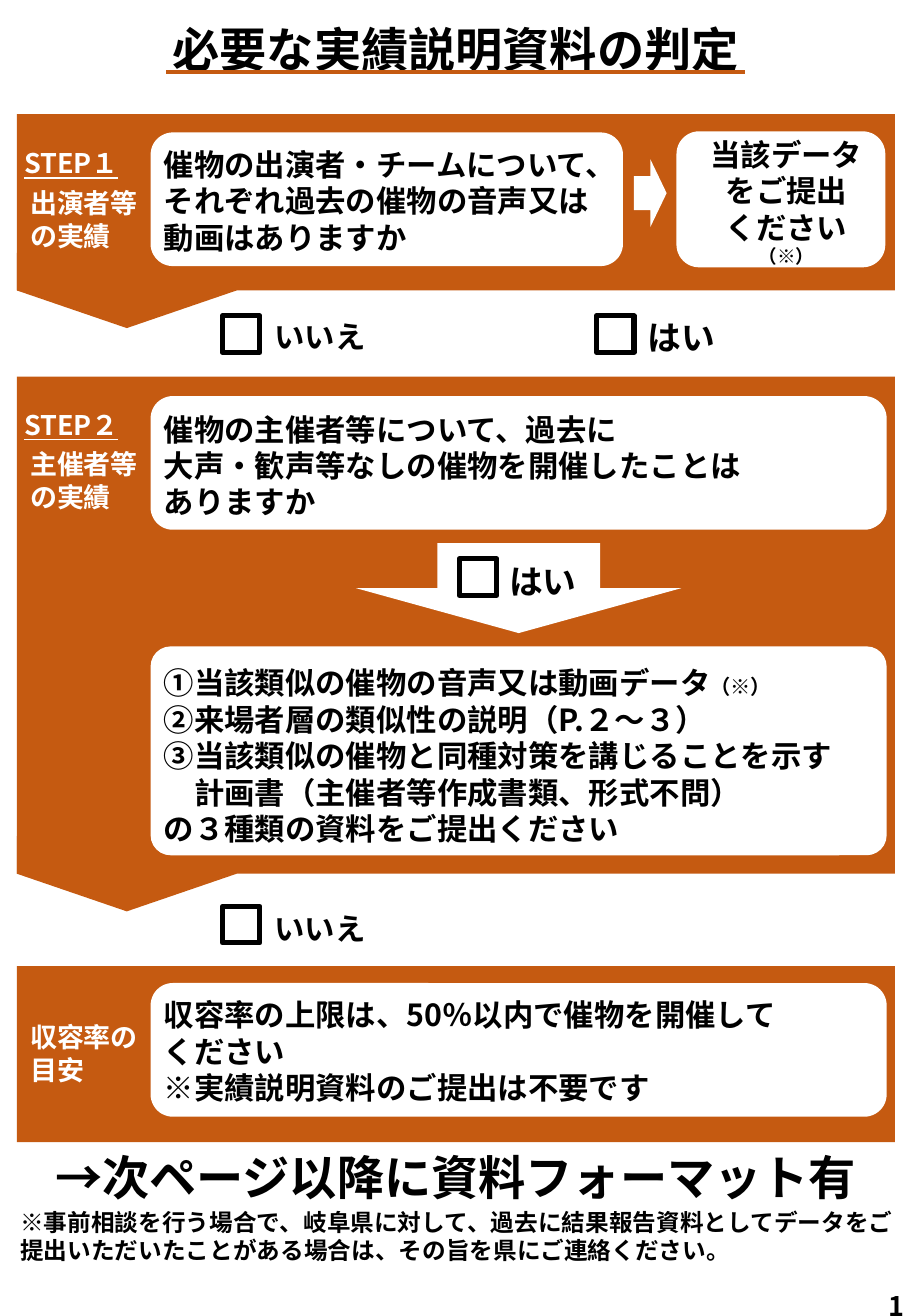
from dataclasses import dataclass
from typing import Optional

from lxml.etree import SubElement
from pptx import Presentation
from pptx.dml.color import RGBColor
from pptx.enum.shapes import MSO_CONNECTOR, MSO_SHAPE
from pptx.enum.text import MSO_AUTO_SIZE, PP_ALIGN
from pptx.oxml.ns import qn
from pptx.util import Pt

ORANGE = RGBColor(0xC5, 0x5A, 0x11)
WHITE = RGBColor(0xFF, 0xFF, 0xFF)
BLACK = RGBColor(0x00, 0x00, 0x00)
FONT = "Noto Sans CJK JP"

BAND_LEFT, BAND_WIDTH = 10, 520.5
POINTER_WIDTH, POINTER_DEPTH = 130.3, 44.6
PANEL_LEFT = 89.3


@dataclass
class Box:
    left: float
    top: float
    width: float
    height: float


@dataclass
class Line:
    text: str
    note: str = ""
    note_size: float = 11
    size: Optional[float] = None
    underline: bool = False
    space_before: float = 0


@dataclass
class Text:
    box: Box
    lines: list[Line]
    size: float = 18
    color: RGBColor = BLACK
    centered: bool = False


@dataclass
class Panel:
    box: Box
    corner: float = 0.1667


@dataclass
class Arrow:
    box: Box
    rotation: float = 0


@dataclass
class Section:
    top: float
    height: float
    pointer: bool
    panels: list[Panel]
    arrows: list[Arrow]
    texts: list[Text]
    checkboxes: list[tuple[float, float]]


def add_shape(shapes, kind: MSO_SHAPE, box: Box, fill: Optional[RGBColor]):
    sp = shapes.add_shape(kind, Pt(box.left), Pt(box.top), Pt(box.width), Pt(box.height))
    sp.shadow.inherit = False
    if fill is None:
        sp.fill.background()
    else:
        sp.fill.solid()
        sp.fill.fore_color.rgb = fill
    sp.line.fill.background()
    return sp


def add_text(shapes, text: Text) -> None:
    box = text.box
    sp = shapes.add_textbox(Pt(box.left), Pt(box.top), Pt(box.width), Pt(box.height))
    tf = sp.text_frame
    tf.word_wrap = True
    tf.auto_size = MSO_AUTO_SIZE.SHAPE_TO_FIT_TEXT
    for i, line in enumerate(text.lines):
        p = tf.add_paragraph() if i else tf.paragraphs[0]
        p.alignment = PP_ALIGN.CENTER if text.centered else PP_ALIGN.LEFT
        if line.space_before:
            p.space_before = Pt(line.space_before)
        p.font.size = Pt(line.size or text.size)
        p.font.bold = True
        p.font.underline = line.underline
        p.font.color.rgb = text.color
        p.font.name = FONT
        # East Asian typeface
        SubElement(p._p.pPr.find(qn("a:defRPr")), qn("a:ea")).set("typeface", FONT)
        p.add_run().text = line.text
        if line.note:
            r = p.add_run()
            r.text = line.note
            r.font.size = Pt(line.note_size)


def add_section(slide_shapes, section: Section) -> None:
    shapes = slide_shapes.add_group_shape().shapes
    # Band, with a pointer centred on its bottom edge
    if section.pointer:
        bottom = section.top + section.height
        center = BAND_LEFT + POINTER_WIDTH / 2
        box = Box(center - POINTER_DEPTH / 2, bottom - POINTER_WIDTH / 2,
                  POINTER_DEPTH, POINTER_WIDTH)
        add_shape(shapes, MSO_SHAPE.PENTAGON, box, ORANGE).rotation = 90
    band = Box(BAND_LEFT, section.top, BAND_WIDTH, section.height)
    add_shape(shapes, MSO_SHAPE.RECTANGLE, band, ORANGE)
    # White panels and arrows
    for panel in section.panels:
        sp = add_shape(shapes, MSO_SHAPE.ROUNDED_RECTANGLE, panel.box, WHITE)
        sp.adjustments[0] = panel.corner
    for arrow in section.arrows:
        sp = add_shape(shapes, MSO_SHAPE.RIGHT_ARROW, arrow.box, WHITE)
        sp.rotation = arrow.rotation
    for text in section.texts:
        add_text(shapes, text)
    # Checkboxes
    for left, top in section.checkboxes:
        sp = add_shape(shapes, MSO_SHAPE.RECTANGLE, Box(left, top, 22.3, 21.6), None)
        sp.line.color.rgb = BLACK
        sp.line.width = Pt(3)


def label(top: float, lines: list[str], step: str = "") -> Text:
    rows = [Line(line) for line in lines]
    if step:
        rows[0].space_before = 4.4
        rows.insert(0, Line(step, underline=True))
    return Text(Box(7.2, top, 85.7, 69 if step else 46), rows, 16, WHITE)


def body(top: float, width: float, height: float, *lines: Line) -> Text:
    return Text(Box(90, top, width, height), list(lines))


def yes(left: float, top: float) -> Text:
    return Text(Box(left, top, 67.7, 31.7), [Line("はい")], 20, centered=True)


def no(top: float) -> Text:
    return Text(Box(144, top, 91.4, 28.8), [Line("いいえ")], centered=True)


SECTIONS = [
    Section(67.7, 104.4, True,
            [Panel(Box(PANEL_LEFT, 78.5, 280, 79.2)), Panel(Box(401, 77.8, 123.8, 80.6))],
            [Arrow(Box(375.8, 94.3, 19.4, 40.3))],
            [label(83.5, [" 出演者等", " の実績"], "STEP１"),
             body(82.8, 280.8, 72.7, Line("催物の出演者・チームについて、"),
                  Line("それぞれ過去の催物の音声又は動画はありますか")),
             Text(Box(395.3, 77, 141.8, 85.7),
                  [Line("当該データ"), Line("をご提出"), Line("ください"),
                   Line("（※）", size=11)], centered=True),
             yes(370, 184.3), no(185)],
            [(353.5, 187.2), (131.8, 187.2)]),
    Section(223.2, 294.5, True,
            [Panel(Box(PANEL_LEFT, 234.7, 436.3, 79.2)),
             Panel(Box(PANEL_LEFT, 383, 436.3, 123.8), 0.096)],
            [Arrow(Box(280.8, 252, 53.3, 193), 90)],
            [label(238.3, [" 主催者等", " の実績"], "STEP２"),
             body(239.8, 435.6, 72.7, Line("催物の主催者等について、過去に"),
                  Line("大声・歓声等なしの催物を開催したことは"), Line("ありますか")),
             yes(288, 329),
             body(390.2, 437.8, 116.6,
                  Line("①当該類似の催物の音声又は動画データ", "（※）", 12),
                  Line("②来場者層の類似性の説明（P.２～３）"),
                  Line("③当該類似の催物と同種対策を講じることを示す"),
                  Line("　計画書（主催者等作成書類、形式不問）"),
                  Line("の３種類の資料をご提出ください")),
             no(535.7)],
            [(272.2, 331.2), (131.8, 537.1)]),
    Section(572.4, 104.4, False,
            [Panel(Box(PANEL_LEFT, 582.5, 436.3, 79.2))], [],
            [label(601.2, [" 収容率の", " 目安"]),
             body(586.8, 429, 72.7, Line("収容率の上限は、50％以内で催物を開催して"),
                  Line("ください"), Line("※実績説明資料のご提出は不要です"))],
            []),
]

TITLE = Text(Box(34.6, 8.6, 470.9, 41), [Line("必要な実績説明資料の判定")], 28, centered=True)
FOOTER = [
    Text(Box(22.3, 676.8, 495.4, 41), [Line("→次ページ以降に資料フォーマット有")], 28,
         centered=True),
    Text(Box(5, 712, 535, 41),
         [Line("※事前相談を行う場合で、岐阜県に対して、過去に結果報告資料としてデータをご"
               "提出いただいたことがある場合は、その旨を県にご連絡ください。")], 14),
    Text(Box(519.8, 760.3, 42.5, 26.6), [Line("1")], 16),
]


def main() -> None:
    prs = Presentation()
    prs.slide_width, prs.slide_height = Pt(540), Pt(779.76)
    s = prs.slides.add_slide(prs.slide_layouts[6])
    # Title with its rule
    add_text(s.shapes, TITLE)
    rule = s.shapes.add_connector(MSO_CONNECTOR.STRAIGHT, Pt(98.6), Pt(42.5), Pt(441.4), Pt(42.5))
    rule.line.color.rgb = ORANGE
    rule.line.width = Pt(2.25)
    SubElement(rule._element.spPr, qn("a:effectLst"))
    # Decision steps
    for section in SECTIONS:
        add_section(s.shapes, section)
    # Closing notes and page number
    for text in FOOTER:
        add_text(s.shapes, text)
    prs.save("out.pptx")


if __name__ == "__main__":
    main()
